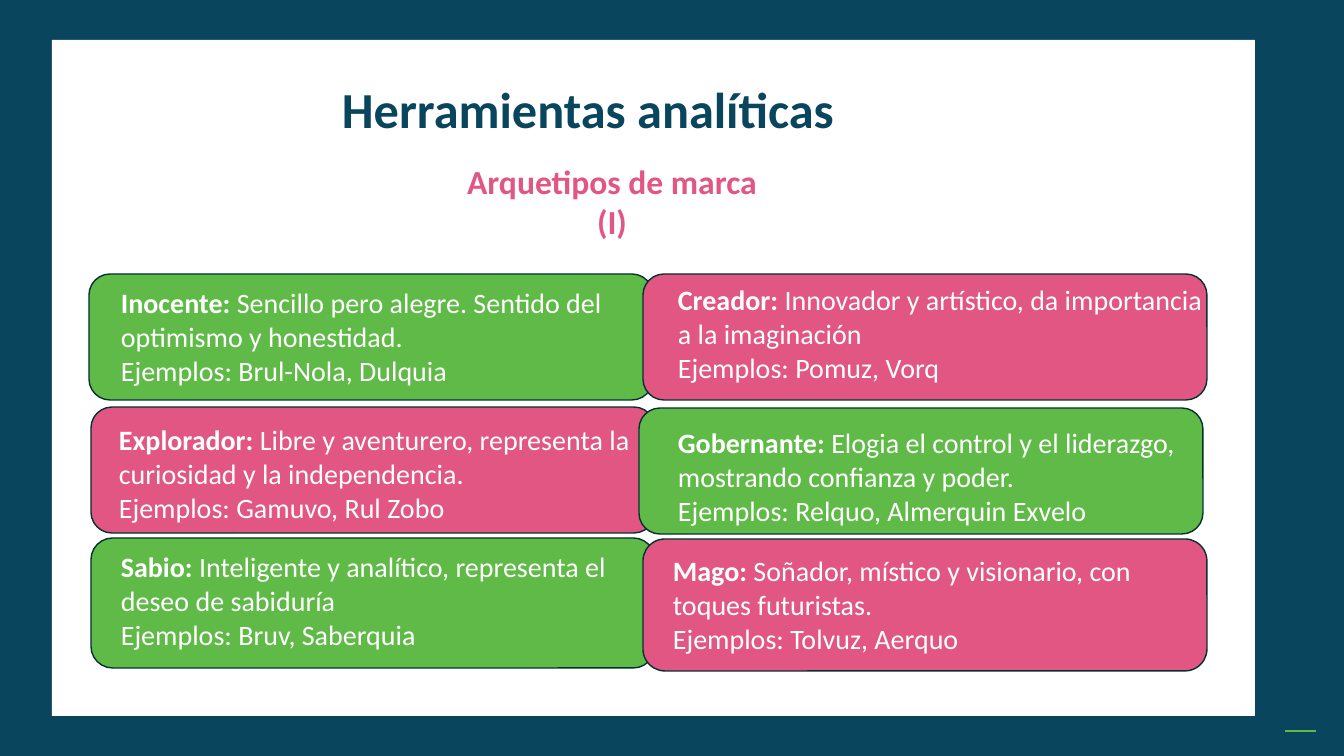
from lxml.etree import SubElement
from pptx import Presentation
from pptx.dml.color import RGBColor
from pptx.enum.shapes import MSO_CONNECTOR, MSO_SHAPE
from pptx.enum.text import MSO_ANCHOR, MSO_AUTO_SIZE, PP_ALIGN
from pptx.oxml.ns import qn
from pptx.util import Emu, Pt

NAVY, GREEN, PINK = "09465E", "60BA47", "E25684"
WHITE, EDGE = "FFFFFF", "043030"

# Card box, text box offset and width, fill, name, trait, examples
CARDS = [
    ((89, 274, 564, 126), (22, 7, 528), GREEN, "Inocente: ",
     "Sencillo pero alegre. Sentido del optimismo y honestidad.",
     "Ejemplos: Brul-Nola, Dulquia"),
    ((643, 274, 564, 126), (25, 4, 559), PINK, "Creador: ",
     "Innovador y artístico, da importancia a la imaginación",
     "Ejemplos: Pomuz, Vorq"),
    ((91, 407, 564, 126), (18, 11, 559), PINK, "Explorador: ",
     "Libre y aventurero, representa la curiosidad y la independencia.",
     "Ejemplos: Gamuvo, Rul Zobo"),
    ((639, 408, 564, 126), (29, 13, 559), GREEN, "Gobernante: ",
     "Elogia el control y el liderazgo, mostrando confianza y poder.",
     "Ejemplos: Relquo, Almerquin Exvelo"),
    ((91, 538, 564, 130), (20, 7, 532), GREEN, "Sabio: ",
     "Inteligente y analítico, representa el deseo de sabiduría",
     "Ejemplos: Bruv, Saberquia"),
    ((643, 539, 564, 132), (20, 10, 559), PINK, "Mago: ",
     "Soñador, místico y visionario, con toques futuristas.",
     "Ejemplos: Tolvuz, Aerquo"),
]


def px(*nums):
    return [Emu(round(n * 914400 / 100.8)) for n in nums]


def tint(code):
    return RGBColor.from_string(code)


def block(slide, kind, box, fill, edge=None):
    shape = slide.shapes.add_shape(kind, *px(*box))
    shape.shadow.inherit = False
    shape.fill.solid()
    shape.fill.fore_color.rgb = tint(fill)
    if edge:
        shape.line.color.rgb = tint(edge)
        shape.line.width = Pt(1)
    else:
        shape.line.fill.background()
    return shape


def write(par, text, size, color, bold=False):
    run = par.add_run()
    run.text = text
    look = {"name": "Calibri", "size": Pt(size), "bold": bold}
    for key, value in look.items():
        setattr(run.font, key, value)
    run.font.color.rgb = tint(color)


def label(slide, box, grow=True):
    frame = slide.shapes.add_textbox(*px(*box)).text_frame
    fit = MSO_AUTO_SIZE.SHAPE_TO_FIT_TEXT if grow else MSO_AUTO_SIZE.NONE
    look = {"word_wrap": True, "auto_size": fit,
            "vertical_anchor": MSO_ANCHOR.TOP}
    for key, value in look.items():
        setattr(frame, key, value)
    return frame


def backdrop(slide, box):
    # Navy frame around a white panel
    left, top, wide, high = box
    block(slide, MSO_SHAPE.RECTANGLE, box, NAVY)
    panel = (left + 52, top + 40, wide - 141, high - 80)
    block(slide, MSO_SHAPE.RECTANGLE, panel, WHITE)
    # Short green rule in the corner
    end, base = left + wide - 28, top + high - 25
    rule = slide.shapes.add_connector(
        MSO_CONNECTOR.STRAIGHT, *px(end - 31, base, end, base))
    rule.line.color.rgb = tint(GREEN)
    rule.line.width = Pt(1)
    SubElement(rule._element.spPr, qn("a:effectLst"))


def header(slide, box):
    left, top, wide, high = box
    # Title
    par = label(slide, box, grow=False).paragraphs[0]
    par.line_spacing = 0.9
    write(par, "Herramientas analíticas", 36, NAVY, True)
    # Subtitle
    par = label(slide, (left + 120, top + 76, 320, 91)).paragraphs[0]
    par.alignment = PP_ALIGN.CENTER
    write(par, "Arquetipos de marca (I)", 24, PINK, True)


def card(slide, box, inset, fill, name, trait, cases):
    block(slide, MSO_SHAPE.ROUNDED_RECTANGLE, box, fill, EDGE)
    dx, dy, wide = inset
    frame = label(slide, (box[0] + dx, box[1] + dy, wide, 112))
    par = frame.paragraphs[0]
    write(par, name, 20, WHITE, True)
    write(par, trait, 20, WHITE)
    write(frame.add_paragraph(), cases, 20, WHITE)


def main():
    deck = Presentation()
    deck.slide_width, deck.slide_height = px(1344, 756)
    slide = deck.slides.add_slide(deck.slide_layouts[6])
    backdrop(slide, (0, 0, 1344, 756))
    header(slide, (332, 80, 710, 133))
    for item in CARDS:
        card(slide, *item)
    deck.save("out.pptx")


if __name__ == "__main__":
    main()
